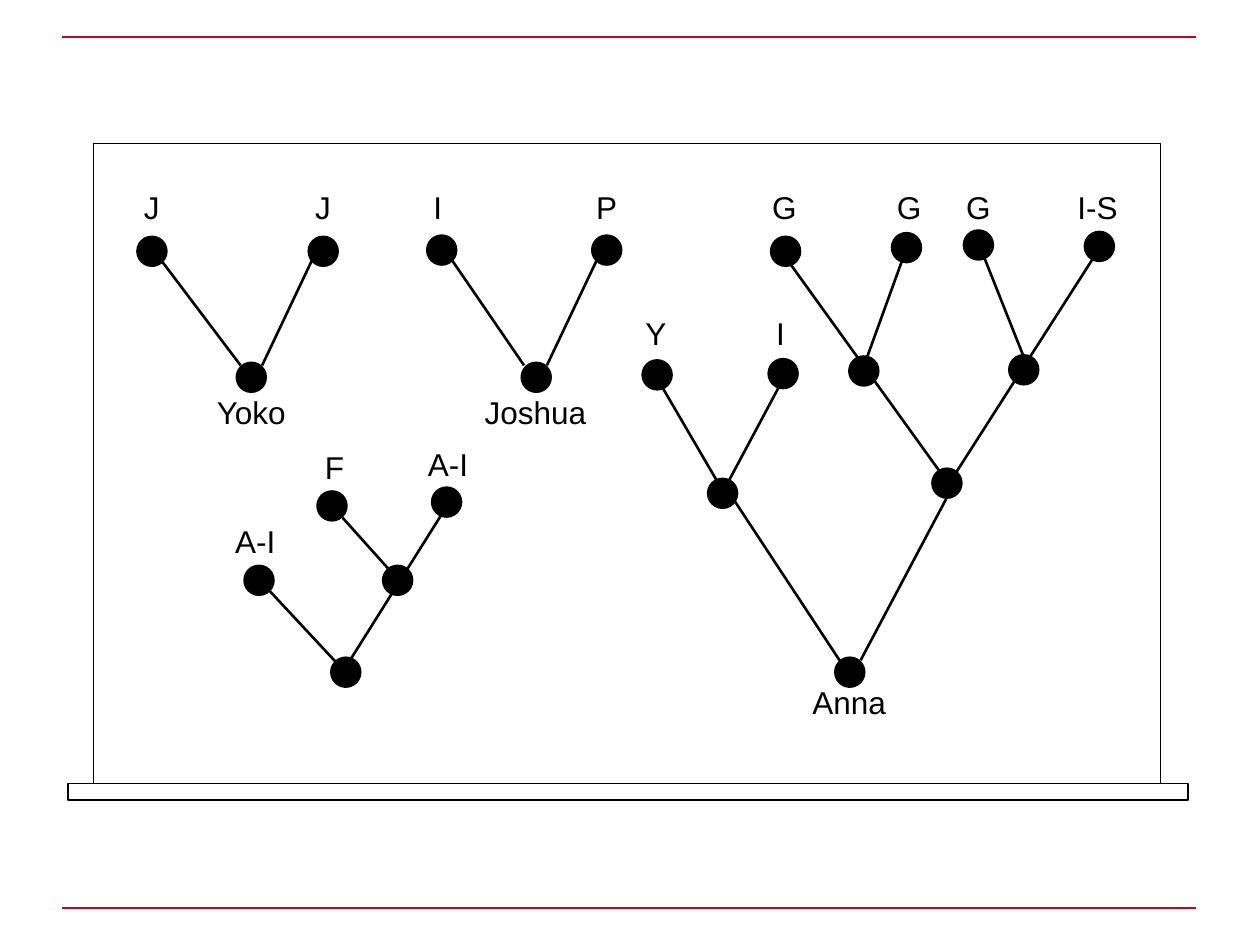
from dataclasses import dataclass

from lxml import etree
from pptx import Presentation
from pptx.dml.color import RGBColor
from pptx.enum import shapes, text
from pptx.oxml import ns
from pptx.util import Pt

BLACK = RGBColor(0x00, 0x00, 0x00)
RED = RGBColor(0xBD, 0x06, 0x23)
DOT_SIZE = 18
LABEL_HEIGHT = 26.6
TOP_LABELS = 107.3
FONT = {"name": "Arial", "size": Pt(18)}
PARAGRAPH = {"alignment": text.PP_ALIGN.CENTER, "line_spacing": 0.85, "space_after": Pt(12)}
FRAME = {"word_wrap": True, "auto_size": text.MSO_AUTO_SIZE.SHAPE_TO_FIT_TEXT}


@dataclass
class Label:
    words: str
    left: float
    top: float
    width: float


@dataclass
class Tree:
    """Dots by left and top, branches by x1, y1, x2, y2, and labels; all in points."""
    dots: list[tuple[float, float]]
    branches: list[tuple[float, float, float, float]]
    labels: list[Label]


TREES = [
    Tree(  # Yoko
        [(77.8, 134.6), (175.7, 134.6), (134.6, 206.6)],
        [(92.9, 149.8, 137.5, 208.8), (183.6, 137.5, 149.8, 208.8)],
        [Label("J", 54.7, TOP_LABELS, 64), Label("J", 152.6, TOP_LABELS, 64),
         Label("Yoko", 111.6, 224.6, 64)],
    ),
    Tree(  # Joshua
        [(243.4, 133.9), (337.7, 133.9), (297.4, 206.6)],
        [(258.5, 149, 299.5, 208.8), (345.6, 139, 312.5, 208.8)],
        [Label("I", 218.2, TOP_LABELS, 64), Label("P", 330.5, TOP_LABELS, 32.4),
         Label("Joshua", 266.4, 224.6, 79.2)],
    ),
    Tree(  # Unnamed tree
        [(139, 322.6), (180.7, 280.1), (246.2, 277.9), (218.2, 322.6), (188.6, 375.1)],
        [(154.1, 337.7, 203, 390.2), (257, 286.6, 197.3, 381.6),
         (195.8, 295.9, 233.3, 337.7)],
        [Label("A-I", 121, 298.1, 49.7), Label("F", 166.3, 255.6, 49.7),
         Label("A-I", 231.1, 254.2, 49.7)],
    ),
    Tree(  # Anna
        [(366.5, 205.2), (438.5, 204.5), (403.9, 272.9),
         (439.9, 134.6), (509, 132.5), (484.6, 203),
         (550.1, 131), (619.2, 131.8), (576, 202.3),
         (532.1, 267.1), (476.6, 375.1)],
        [(375.8, 216.7, 414, 282.2), (448.6, 214.6, 414, 279.4),
         (416.2, 280.8, 480.2, 378), (540.7, 285.1, 491.8, 377.3),
         (449.3, 147.6, 540, 273.6), (516.2, 146.9, 494.6, 206.6),
         (624.2, 148.3, 543.6, 274.3), (560.9, 143.3, 587.5, 210.2)],
        [Label("Y", 358.6, 179.3, 32.4), Label("I", 429.8, 179.3, 32.4),
         Label("G", 432, TOP_LABELS, 32.4), Label("G", 503.3, TOP_LABELS, 32.4),
         Label("G", 542.9, TOP_LABELS, 32.4), Label("I-S", 603.4, TOP_LABELS, 47.5),
         Label("Anna", 445.7, 390.2, 79.2)],
    ),
]


def apply_format(target: object, values: dict) -> None:
    for name, value in values.items():
        setattr(target, name, value)


def draw_line(slide, ends: tuple, color: RGBColor = BLACK, width: float = 1.5) -> None:
    line = slide.shapes.add_connector(shapes.MSO_CONNECTOR.STRAIGHT, *map(Pt, ends))
    line.line.color.rgb = color
    line.line.width = Pt(width)
    etree.SubElement(line._element.spPr, ns.qn("a:effectLst"))


def draw_box(slide, box: tuple) -> None:
    shape = slide.shapes.add_shape(shapes.MSO_SHAPE.RECTANGLE, *map(Pt, box))
    shape.shadow.inherit = False
    shape.fill.background()
    shape.line.color.rgb = BLACK
    shape.line.width = Pt(0.75)


def draw_dot(slide, left: float, top: float) -> None:
    box = (left, top, DOT_SIZE, DOT_SIZE)
    shape = slide.shapes.add_shape(shapes.MSO_SHAPE.OVAL, *map(Pt, box))
    shape.shadow.inherit = False
    shape.fill.solid()
    shape.fill.fore_color.rgb = BLACK
    shape.line.fill.background()


def draw_label(slide, label: Label) -> None:
    box = (label.left, label.top, label.width, LABEL_HEIGHT)
    frame = slide.shapes.add_textbox(*map(Pt, box)).text_frame
    apply_format(frame, FRAME)
    paragraph = frame.paragraphs[0]
    apply_format(paragraph, PARAGRAPH)
    run = paragraph.add_run()
    run.text = label.words
    apply_format(run.font, FONT)
    run.font.color.rgb = BLACK


def draw_tree(slide, tree: Tree) -> None:
    for branch in tree.branches:
        draw_line(slide, branch)
    for dot in tree.dots:
        draw_dot(slide, *dot)
    for label in tree.labels:
        draw_label(slide, label)


def main() -> None:
    presentation = Presentation()
    presentation.slide_width, presentation.slide_height = Pt(720), Pt(540)
    slide = presentation.slides.add_slide(presentation.slide_layouts[6])

    # Red rules at top and bottom
    for y in (21, 519):
        draw_line(slide, (35.2, y, 683.2, y), RED, 1)

    # Whiteboard and its tray
    draw_box(slide, (53.3, 82, 609.8, 365.8))
    draw_box(slide, (38.9, 447.8, 640, 9.4))

    # Family trees
    for tree in TREES:
        draw_tree(slide, tree)

    presentation.save("out.pptx")


if __name__ == "__main__":
    main()
